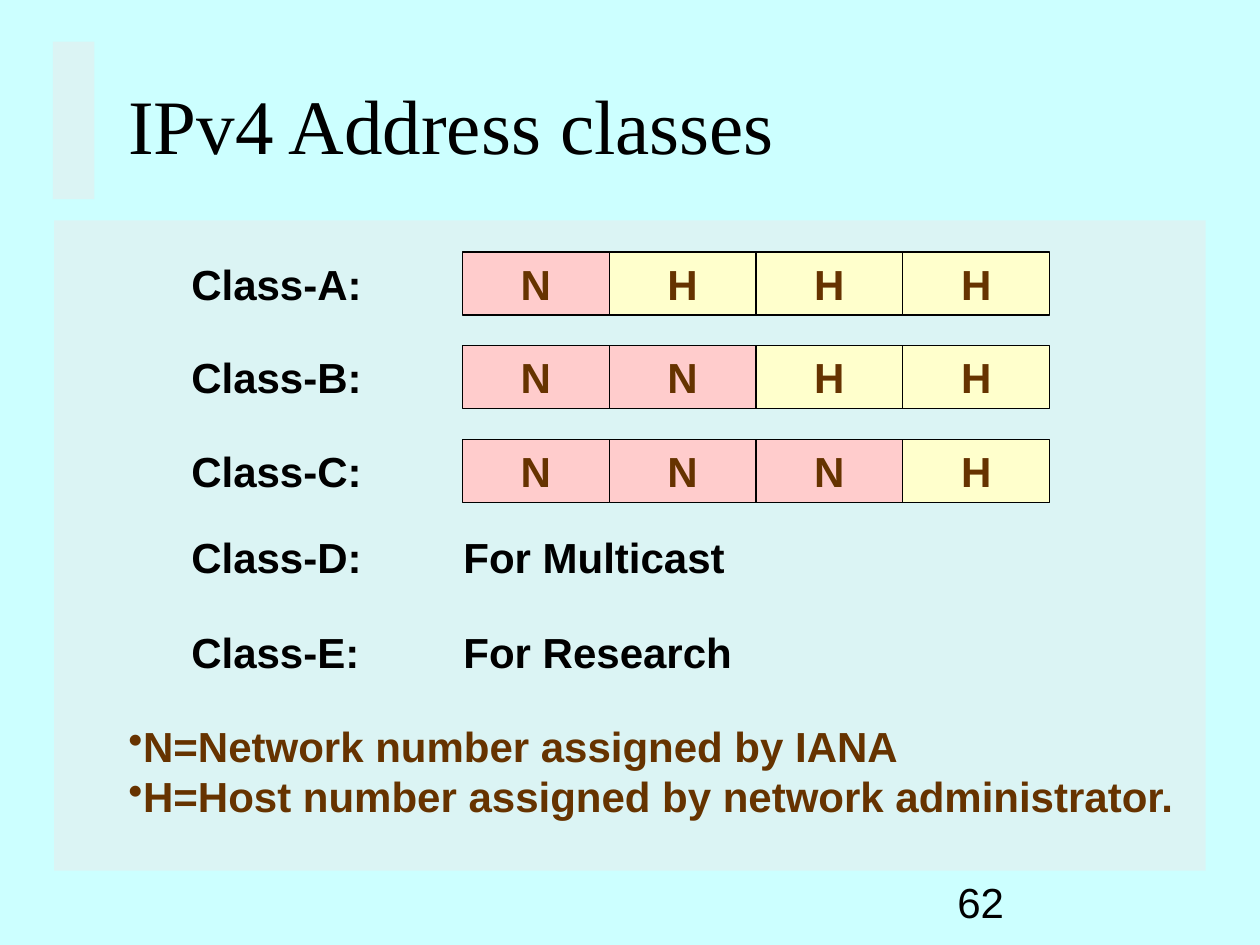
"""Build the slide on IPv4 address classes."""
from lxml import etree
from pptx import Presentation
from pptx.dml.color import RGBColor
from pptx.enum.shapes import MSO_SHAPE
from pptx.enum.text import MSO_ANCHOR, PP_ALIGN
from pptx.oxml.ns import qn
from pptx.util import Inches, Pt

RECTANGLE = MSO_SHAPE.RECTANGLE
TOP, MIDDLE = MSO_ANCHOR.TOP, MSO_ANCHOR.MIDDLE
LEFT, CENTER = PP_ALIGN.LEFT, PP_ALIGN.CENTER

BACKGROUND = RGBColor(0xCC, 0xFF, 0xFF)
PANEL = RGBColor(0xEA, 0xEA, 0xEA)
BLACK = RGBColor(0, 0, 0)
BROWN = RGBColor(0x66, 0x33, 0x00)
OCTET_FILLS = {"N": RGBColor(0xFF, 0xCC, 0xCC), "H": RGBColor(0xFF, 0xFF, 0xCC)}

TITLE = "IPv4 Address classes"
PAGE_NUMBER = "62"
PANELS = [(0.43, 1.75, 9.14, 5.16), (0.42, 0.33, 0.33, 1.25)]
OCTET_CLASSES = [
    ("Class-A:", "NHHH", 2),
    ("Class-B:", "NNHH", 2.74),
    ("Class-C:", "NNNH", 3.49),
]
PURPOSE_CLASSES = [
    ("Class-D:", "For Multicast", 4.17),
    ("Class-E:", "For Research", 4.92),
]
LEGEND = [
    "N=Network number assigned by IANA",
    "H=Host number assigned by network administrator.",
]

LABEL_LEFT, LABEL_WIDTH = 1.42, 1.83
PURPOSE_LEFT, PURPOSE_WIDTH = 3.58, 3
OCTETS_LEFT, OCTETS_RIGHT = 3.67, 8.33
OCTET_WIDTH = (OCTETS_RIGHT - OCTETS_LEFT) / 4
ROW_HEIGHT = 0.5


def add_bullet(para):
    properties = para._p.get_or_add_pPr()
    properties.set("marL", "0")
    properties.set("indent", "0")
    etree.SubElement(properties, qn("a:buChar")).set("char", "•")


def write_text(box, lines, size=24, font="Arial", color=BLACK, bold=True,
               align=LEFT, anchor=TOP, bullets=False):
    frame = box.text_frame
    frame.word_wrap = True
    frame.vertical_anchor = anchor
    for index, line in enumerate(lines):
        para = frame.add_paragraph() if index else frame.paragraphs[0]
        para.alignment = align
        if bullets:
            add_bullet(para)
        span = para.add_run()
        span.text = line
        span.font.name = font
        span.font.size = Pt(size)
        span.font.bold = bold
        span.font.color.rgb = color


def add_text(page, place, lines, **text_format):
    box = page.shapes.add_textbox(*map(Inches, place))
    write_text(box, lines, **text_format)


def add_rectangle(page, place, fill):
    box = page.shapes.add_shape(RECTANGLE, *map(Inches, place))
    box.shadow.inherit = False
    box.fill.solid()
    box.fill.fore_color.rgb = fill
    return box


def add_panel(page, place):
    panel = add_rectangle(page, place, PANEL)
    panel.line.fill.background()
    color = panel._element.spPr.find(qn("a:solidFill"))[0]
    etree.SubElement(color, qn("a:alpha")).set("val", "50000")


def add_octet(page, place, letter):
    octet = add_rectangle(page, place, OCTET_FILLS[letter])
    octet.line.color.rgb = BLACK
    octet.line.width = Pt(0.75)
    write_text(octet, [letter], color=BROWN, align=CENTER)


def add_label(page, label, top):
    add_text(page, (LABEL_LEFT, top, LABEL_WIDTH, ROW_HEIGHT), [label])


def main():
    deck = Presentation()
    deck.slide_width, deck.slide_height = Inches(10), Inches(7.5)
    page = deck.slides.add_slide(deck.slide_layouts[6])
    page.background.fill.solid()
    page.background.fill.fore_color.rgb = BACKGROUND

    for place in PANELS:
        add_panel(page, place)
    add_text(page, (7.5, 6.91, 2.08, 0.5), [PAGE_NUMBER], bold=False, anchor=MIDDLE)
    add_text(page, (0.92, 0.38, 8.5, 1.21), [TITLE], size=44,
             font="Times New Roman", bold=False, anchor=MIDDLE)

    for label, letters, top in OCTET_CLASSES:
        add_label(page, label, top)
        for column, letter in enumerate(letters):
            left = OCTETS_LEFT + column * OCTET_WIDTH
            add_octet(page, (left, top, OCTET_WIDTH, ROW_HEIGHT), letter)
    for label, purpose, top in PURPOSE_CLASSES:
        add_label(page, label, top)
        add_text(page, (PURPOSE_LEFT, top, PURPOSE_WIDTH, ROW_HEIGHT), [purpose])

    add_text(page, (0.92, 5.67, 8.67, 0.9), LEGEND, color=BROWN, bullets=True)
    deck.save("out.pptx")


if __name__ == "__main__":
    main()
